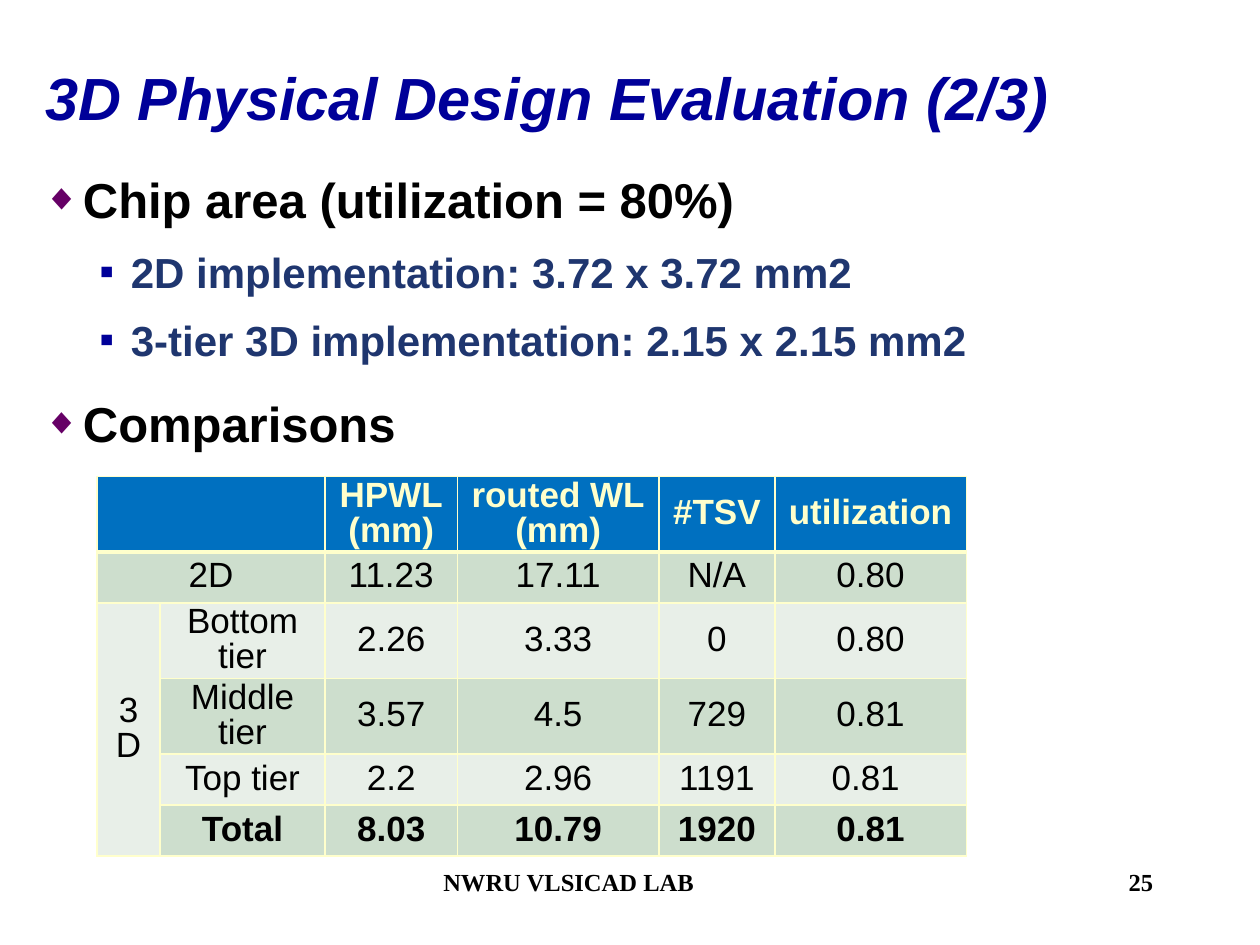
"""Build the 3D physical design evaluation slide with its comparison table."""
from lxml import etree
from pptx import Presentation
from pptx.dml.color import RGBColor
from pptx.enum.text import MSO_ANCHOR, PP_ALIGN
from pptx.oxml.ns import qn
from pptx.util import Inches, Pt

TOP, MIDDLE = MSO_ANCHOR.TOP, MSO_ANCHOR.MIDDLE
LEFT, CENTER, RIGHT = PP_ALIGN.LEFT, PP_ALIGN.CENTER, PP_ALIGN.RIGHT
CREAM, BLACK = "FFFFCC", "000000"


def rgb(value):
    return RGBColor.from_string(value)


def add(parent, tag, **attrs):
    return etree.SubElement(parent, qn(tag), {k: str(v) for k, v in attrs.items()})


prs = Presentation()
prs.slide_width, prs.slide_height = Inches(10), Inches(7.5)
W, H = prs.slide_width / 100, prs.slide_height / 100
s = prs.slides.add_slide(prs.slide_layouts[6])

TITLE = dict(font=dict(name="Arial", size=Pt(34), bold=True, italic=True),
             color="000099", spacing=0.9, align=LEFT)
HEAD = dict(font=dict(name="Arial", size=Pt(28), bold=True), color=BLACK,
            spacing=1.25, align=LEFT, before=30,
            bullet=("◆", "660066", 75, 0.31, 0.31))
ITEM = dict(font=dict(name="Arial", size=Pt(24), bold=True), color="1F366F",
            spacing=1.1, align=LEFT, before=30, level=1,
            bullet=("▪", "000099", 100, 0.69, 0.25))
FOOT = dict(font=dict(name="Times New Roman", size=Pt(14), bold=True),
            color=BLACK, spacing=1.0, align=LEFT, before=50)
NUMBER = dict(FOOT, align=RIGHT)

boxes = [
    ((2.6, 5.73, 90, 9.87), MIDDLE, [("3D Physical Design Evaluation (2/3)", TITLE)]),
    ((2.5, 15.73, 95.1, 75.87), TOP, [
        ("Chip area (utilization = 80%)", HEAD),
        ("2D implementation: 3.72 x 3.72 mm2", ITEM),
        ("3-tier 3D implementation: 2.15 x 2.15 mm2", ITEM),
        ("Comparisons", HEAD)]),
    ((34.2, 91.07, 31.7, 6.67), TOP, [("NWRU VLSICAD LAB", FOOT)]),
    ((71.7, 91.07, 20.8, 6.67), TOP, [("25", NUMBER)]),
]
for (x, y, w, h), anchor, lines in boxes:
    sp = s.shapes.add_textbox(int(x * W), int(y * H), int(w * W), int(h * H))
    tf = sp.text_frame
    tf.word_wrap, tf.vertical_anchor = True, anchor
    for i, (text, style) in enumerate(lines):
        p = tf.add_paragraph() if i else tf.paragraphs[0]
        p.alignment, p.line_spacing = style["align"], style["spacing"]
        p.level = style.get("level", 0)
        r = p.add_run()
        r.text = text
        for key, value in style["font"].items():
            setattr(r.font, key, value)
        r.font.color.rgb = rgb(style["color"])
        pPr = p._p.get_or_add_pPr()
        if "before" in style:
            add(add(pPr, "a:spcBef"), "a:spcPct", val=style["before"] * 1000)
        if "bullet" in style:
            char, color, size, margin, hang = style["bullet"]
            pPr.set("marL", str(Inches(margin)))
            pPr.set("indent", str(-Inches(hang)))
            add(add(pPr, "a:buClr"), "a:srgbClr", val=color)
            add(pPr, "a:buSzPct", val=size * 1000)
            add(pPr, "a:buFont", typeface="Arial")
            add(pPr, "a:buChar", char=char)

rows = [
    ["", "", "HPWL\n(mm)", "routed WL\n(mm)", "#TSV", "utilization"],
    ["2D", "", "11.23", "17.11", "N/A", "0.80"],
    ["3D", "Bottom tier", "2.26", "3.33", "0", "0.80"],
    ["", "Middle tier", "3.57", "4.5", "729", "0.81"],
    ["", "Top tier", "2.2", "2.96", "1191", "0.81 "],
    ["", "Total", "8.03", "10.79", "1920", "0.81"],
]
fills = ["0070C0"] + ["CDDECD", "E8EFE8"] * 2 + ["CDDECD"]
widths = [5, 13.1, 10.5, 16, 9.2, 15.2]
row_h = 5.4
last = len(rows) - 1
frame = s.shapes.add_table(len(rows), len(widths), int(7.7 * W), int(50.4 * H),
                           int(sum(widths) * W), int(len(rows) * row_h * H))
table = frame.table
for col, width in zip(table.columns, widths):
    col.width = int(width * W)
for row in table.rows:
    row.height = int(row_h * H)
for first, end in [((0, 0), (0, 1)), ((1, 0), (1, 1)), ((2, 0), (last, 0))]:
    table.cell(*first).merge(table.cell(*end))

layout = dict(vertical_anchor=MIDDLE, margin_left=Inches(0.08),
              margin_right=Inches(0.08), margin_top=0, margin_bottom=0)
for i, values in enumerate(rows):
    for j, text in enumerate(values):
        cell = table.cell(i, j)
        for key, value in layout.items():
            setattr(cell, key, value)
        tcPr = cell._tc.get_or_add_tcPr()
        for side in "LRTB":
            thick = (i, side) in [(0, "B"), (1, "T")]
            ln = add(tcPr, f"a:ln{side}", w=Pt(3 if thick else 1))
            add(add(ln, "a:solidFill"), "a:srgbClr", val=CREAM)
        cell.fill.solid()
        cell.fill.fore_color.rgb = rgb(fills[2] if i > 1 and j == 0 else fills[i])
        cell.text_frame.text = text
        font = dict(name="Arial", size=Pt(20), bold=i in (0, last))
        for p in cell.text_frame.paragraphs:
            p.alignment, p.line_spacing = CENTER, 0.9
            for key, value in font.items():
                setattr(p.font, key, value)
            for r in p.runs:
                for key, value in font.items():
                    setattr(r.font, key, value)
                r.font.color.rgb = rgb(BLACK if i else CREAM)

prs.save("out.pptx")
